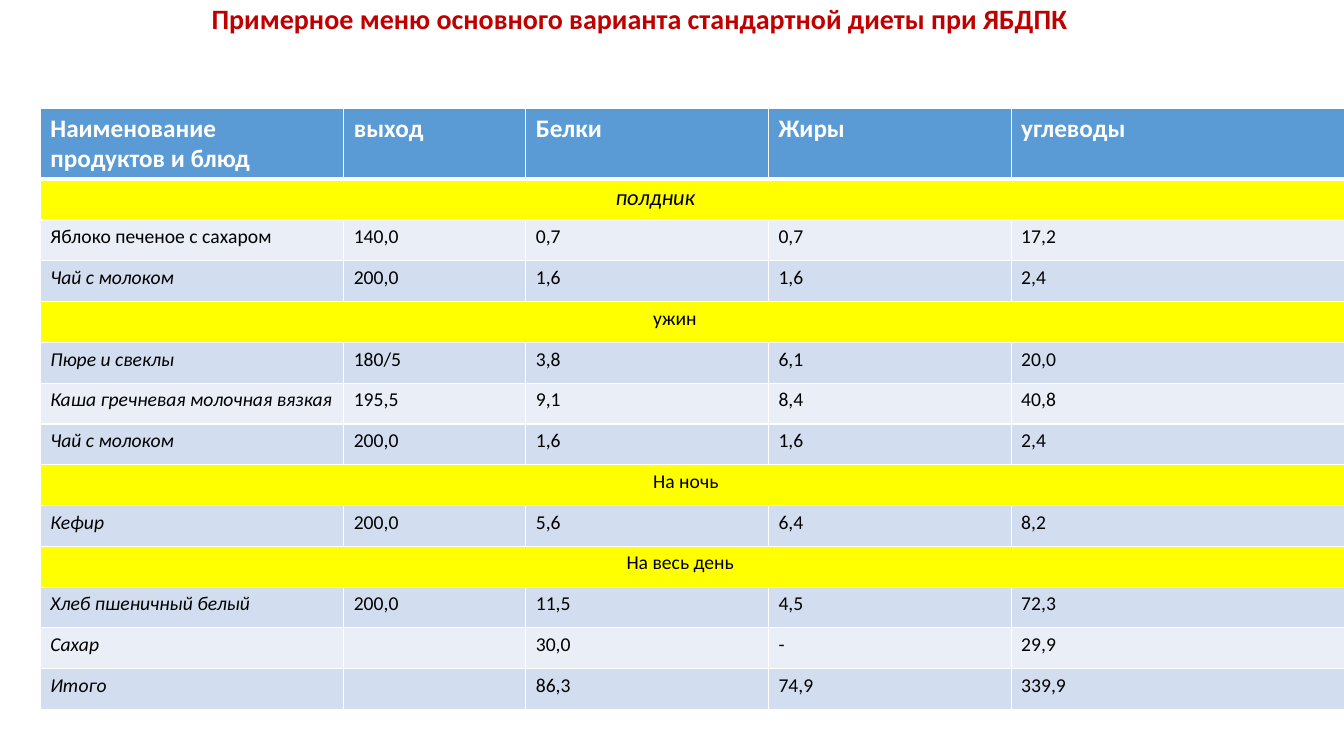
from dataclasses import dataclass

from lxml.etree import SubElement
from pptx import Presentation
from pptx.dml.color import RGBColor
from pptx.enum.text import MSO_ANCHOR, PP_ALIGN
from pptx.oxml.ns import qn
from pptx.util import Inches, Pt

SLIDE_WIDTH = Inches(13.33)
SLIDE_HEIGHT = Inches(7.5)
BLANK_LAYOUT = 6


@dataclass(frozen=True)
class Theme:
    font: str = "Calibri"
    title: str = "C00000"
    header: str = "5B9BD5"
    section: str = "FFFF00"
    stripes: tuple = ("EAEFF7", "D2DEEF")
    light: str = "FFFFFF"
    dark: str = "000000"
    title_size: int = 20
    header_size: int = 18
    section_size: int = 16
    body_size: int = 14
    thin_line: int = 1
    thick_line: int = 3


@dataclass(frozen=True)
class Section:
    name: str
    indent: float
    size: int = Theme.body_size
    italic: bool = False


THEME = Theme()
TITLE = "Примерное меню основного варианта стандартной диеты при ЯБДПК"
HEADERS = ("Наименование продуктов и блюд", "выход", "Белки", "Жиры", "углеводы")
COLUMN_SHARES = (0.25, 0.15, 0.2, 0.2, 0.2)
TABLE_LEFT, TABLE_TOP, TABLE_WIDTH = 0.03, 0.143, 0.903
HEADER_HEIGHT, ROW_HEIGHT = 0.094, 0.054
UPRIGHT_DISH = "Яблоко печеное с сахаром"
MENU = (
    Section("полдник", 0.474, THEME.section_size, True),
    (UPRIGHT_DISH, "140,0", "0,7", "0,7", "17,2"),
    ("Чай с молоком", "200,0", "1,6", "1,6", "2,4"),
    Section("ужин", 0.505),
    ("Пюре и свеклы", "180/5", "3,8", "6,1", "20,0"),
    ("Каша гречневая молочная вязкая", "195,5", "9,1", "8,4", "40,8"),
    ("Чай с молоком", "200,0", "1,6", "1,6", "2,4"),
    Section("На ночь", 0.505),
    ("Кефир", "200,0", "5,6", "6,4", "8,2"),
    Section("На весь день", 0.483),
    ("Хлеб пшеничный белый", "200,0", "11,5", "4,5", "72,3"),
    ("Сахар", "", "30,0", "-", "29,9"),
    ("Итого", "", "86,3", "74,9", "339,9"),
)


def across(share):
    return round(SLIDE_WIDTH * share)


def down(share):
    return round(SLIDE_HEIGHT * share)


def write(text_frame, text, size, color, bold=False, italic=False):
    text_frame.text = text
    for run in text_frame.paragraphs[0].runs:
        run.font.name = THEME.font
        run.font.size = Pt(size)
        run.font.bold = bold
        run.font.italic = italic
        run.font.color.rgb = RGBColor.from_string(color)


def add_title(slide):
    shape = slide.shapes.add_textbox(across(0.02), 0, across(0.912), down(0.153))
    text_frame = shape.text_frame
    text_frame.word_wrap = True
    text_frame.vertical_anchor = MSO_ANCHOR.TOP
    write(text_frame, TITLE, THEME.title_size, THEME.title, bold=True)
    paragraph = text_frame.paragraphs[0]
    paragraph.alignment = PP_ALIGN.CENTER
    paragraph.line_spacing = 0.9


def set_borders(cell, top, bottom):
    properties = cell._tc.get_or_add_tcPr()
    widths = {"L": THEME.thin_line, "R": THEME.thin_line, "T": top, "B": bottom}
    for side, width in widths.items():
        line = SubElement(properties, qn(f"a:ln{side}"), w=str(Pt(width)))
        fill = SubElement(line, qn("a:solidFill"))
        SubElement(fill, qn("a:srgbClr"), val=THEME.light)


def style_row(table, row, color):
    top = THEME.thick_line if row == 1 else THEME.thin_line
    bottom = THEME.thick_line if row == 0 else THEME.thin_line
    for cell in table.rows[row].cells:
        set_borders(cell, top, bottom)
        cell.fill.solid()
        cell.fill.fore_color.rgb = RGBColor.from_string(color)


def fill_header(table):
    style_row(table, 0, THEME.header)
    for cell, text in zip(table.rows[0].cells, HEADERS):
        write(cell.text_frame, text, THEME.header_size, THEME.light, bold=True)


def fill_section(table, row, section):
    style_row(table, row, THEME.section)
    cell = table.cell(row, 0)
    cell.merge(table.cell(row, len(HEADERS) - 1))
    cell.margin_left = across(TABLE_WIDTH * section.indent)
    write(cell.text_frame, section.name, section.size, THEME.dark, italic=section.italic)


def fill_dish(table, row, values):
    style_row(table, row, THEME.stripes[row % 2])
    for column, (cell, text) in enumerate(zip(table.rows[row].cells, values)):
        italic = column == 0 and text != UPRIGHT_DISH
        write(cell.text_frame, text, THEME.body_size, THEME.dark, italic=italic)


def add_menu_table(slide):
    height = HEADER_HEIGHT + ROW_HEIGHT * len(MENU)
    table = slide.shapes.add_table(
        len(MENU) + 1, len(HEADERS),
        across(TABLE_LEFT), down(TABLE_TOP), across(TABLE_WIDTH), down(height),
    ).table
    for column, share in zip(table.columns, COLUMN_SHARES):
        column.width = across(TABLE_WIDTH * share)
    for index, row in enumerate(table.rows):
        row.height = down(ROW_HEIGHT if index else HEADER_HEIGHT)
    fill_header(table)
    for row, entry in enumerate(MENU, start=1):
        fill = fill_section if isinstance(entry, Section) else fill_dish
        fill(table, row, entry)


def main():
    presentation = Presentation()
    presentation.slide_width = SLIDE_WIDTH
    presentation.slide_height = SLIDE_HEIGHT
    slide = presentation.slides.add_slide(presentation.slide_layouts[BLANK_LAYOUT])
    add_title(slide)
    add_menu_table(slide)
    presentation.save("out.pptx")


if __name__ == "__main__":
    main()
